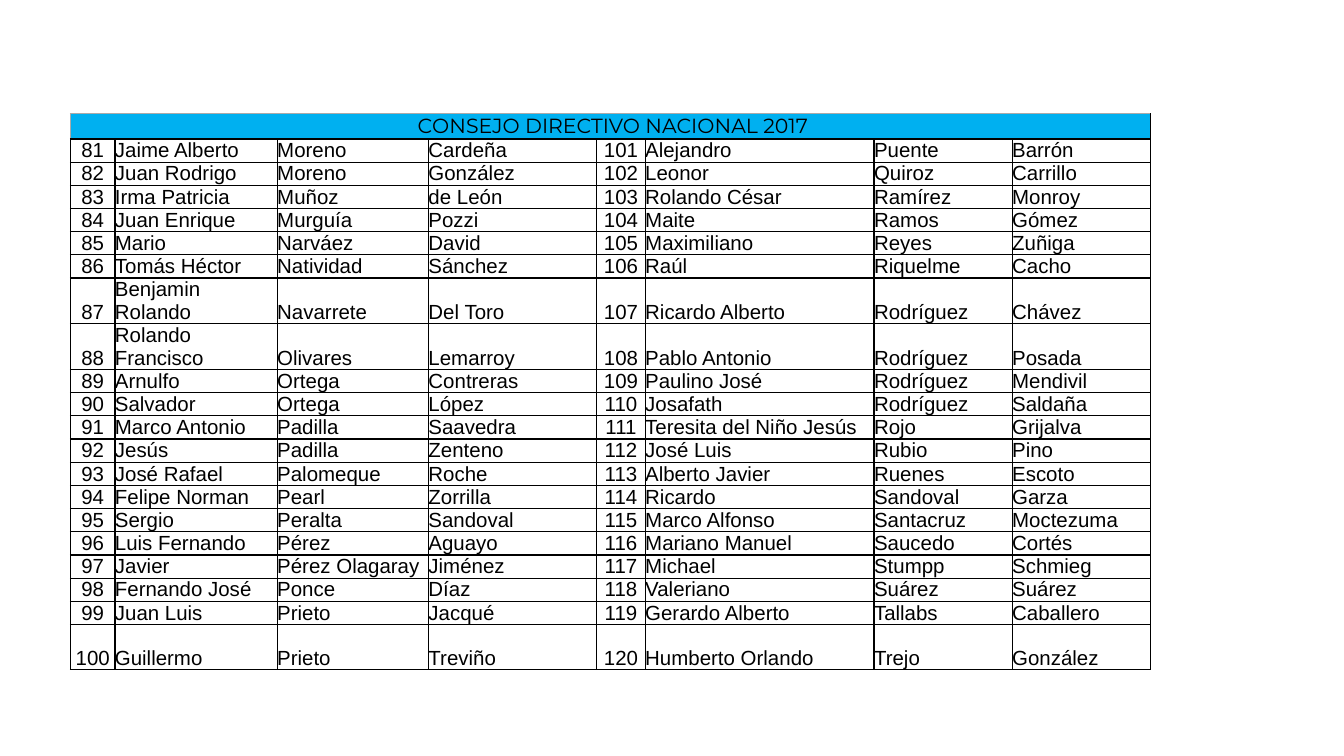
from lxml import etree
from pptx import Presentation
from pptx.dml.color import RGBColor
from pptx.enum.text import MSO_ANCHOR, PP_ALIGN
from pptx.oxml.ns import qn
from pptx.util import Inches, Pt

CENTER, LEFT = PP_ALIGN.CENTER, PP_ALIGN.LEFT
MIDDLE, BOTTOM = MSO_ANCHOR.MIDDLE, MSO_ANCHOR.BOTTOM
BLACK = RGBColor(0x00, 0x00, 0x00)
WHITE = RGBColor(0xFF, 0xFF, 0xFF)
GRAY = RGBColor(0xAA, 0xAA, 0xAA)
SKY_BLUE = RGBColor(0x00, 0xB0, 0xF0)

TEXT_SIZE = Pt(14.6)
TITLE = " CONSEJO DIRECTIVO NACIONAL 2017"
FIRST_NUMBER = 81
COLUMN_WIDTHS = [0.44, 1.61, 1.5, 1.67, 0.48, 2.27, 1.37, 1.37]
ROW_HEIGHT, LAST_ROW_HEIGHT = 0.23, 0.45

# Given names, first surname, second surname, in member order
MEMBERS = [
    ("Jaime Alberto", "Moreno", "Cardeña"),
    ("Juan Rodrigo", "Moreno", "González"),
    ("Irma Patricia", "Muñoz", "de León"),
    ("Juan Enrique", "Murguía", "Pozzi"),
    ("Mario", "Narváez", "David"),
    ("Tomás Héctor", "Natividad", "Sánchez"),
    ("Benjamin Rolando", "Navarrete", "Del Toro"),
    ("Rolando Francisco", "Olivares", "Lemarroy"),
    ("Arnulfo", "Ortega", "Contreras"),
    ("Salvador", "Ortega", "López"),
    ("Marco Antonio", "Padilla", "Saavedra"),
    ("Jesús", "Padilla", "Zenteno"),
    ("José Rafael", "Palomeque", "Roche"),
    ("Felipe Norman", "Pearl", "Zorrilla"),
    ("Sergio", "Peralta", "Sandoval"),
    ("Luis Fernando", "Pérez", "Aguayo"),
    ("Javier", "Pérez Olagaray", "Jiménez"),
    ("Fernando José", "Ponce", "Díaz"),
    ("Juan Luis", "Prieto", "Jacqué"),
    ("Guillermo", "Prieto", "Treviño"),
    ("Alejandro", "Puente", "Barrón"),
    ("Leonor", "Quiroz", "Carrillo"),
    ("Rolando César", "Ramírez", "Monroy"),
    ("Maite", "Ramos", "Gómez"),
    ("Maximiliano", "Reyes", "Zuñiga"),
    ("Raúl", "Riquelme", "Cacho"),
    ("Ricardo Alberto", "Rodríguez", "Chávez"),
    ("Pablo Antonio", "Rodríguez", "Posada"),
    ("Paulino José", "Rodríguez", "Mendivil"),
    ("Josafath", "Rodríguez", "Saldaña"),
    ("Teresita del Niño Jesús", "Rojo", "Grijalva"),
    ("José Luis", "Rubio", "Pino"),
    ("Alberto Javier", "Ruenes", "Escoto"),
    ("Ricardo", "Sandoval", "Garza"),
    ("Marco Alfonso", "Santacruz", "Moctezuma"),
    ("Mariano Manuel", "Saucedo", "Cortés"),
    ("Michael", "Stumpp", "Schmieg"),
    ("Valeriano", "Suárez", "Suárez"),
    ("Gerardo Alberto", "Tallabs", "Caballero"),
    ("Humberto Orlando", "Trejo", "González"),
]


def set_borders(cell, left, right, top, bottom):
    """Draw 1 pt borders; they must precede the fill in the cell properties."""
    properties = cell._tc.get_or_add_tcPr()
    sides = [("a:lnL", left), ("a:lnR", right), ("a:lnT", top), ("a:lnB", bottom)]
    for position, (side, color) in enumerate(sides):
        line = etree.Element(qn(side), w=str(Pt(1)))
        fill = etree.SubElement(line, qn("a:solidFill"))
        etree.SubElement(fill, qn("a:srgbClr"), val=str(color))
        properties.insert(position, line)


def fill_cell(cell, text, font_name, fill_color, align, anchor):
    cell.margin_left = cell.margin_right = cell.margin_top = cell.margin_bottom = 0
    cell.vertical_anchor = anchor
    cell.fill.solid()
    cell.fill.fore_color.rgb = fill_color
    paragraph = cell.text_frame.paragraphs[0]
    paragraph.text = text
    paragraph.alignment = align
    paragraph.font.name = font_name
    paragraph.font.size = TEXT_SIZE
    paragraph.font.color.rgb = BLACK


presentation = Presentation()
presentation.slide_width = Inches(13.33)
presentation.slide_height = Inches(7.5)
slide = presentation.slides.add_slide(presentation.slide_layouts[6])

# Council table: a title row, then two members side by side in each row
half = len(MEMBERS) // 2
row_heights = [ROW_HEIGHT] * half + [LAST_ROW_HEIGHT]
council = slide.shapes.add_table(
    len(row_heights), len(COLUMN_WIDTHS), Inches(0.7), Inches(1.13),
    Inches(sum(COLUMN_WIDTHS)), Inches(sum(row_heights))).table
council.first_row = False
council.horz_banding = False
for column, width in zip(council.columns, COLUMN_WIDTHS):
    column.width = Inches(width)
for row, height in zip(council.rows, row_heights):
    row.height = Inches(height)

# Title row
title_cell = council.cell(0, 0)
title_cell.merge(council.cell(0, len(COLUMN_WIDTHS) - 1))
fill_cell(title_cell, TITLE, "Montserrat", SKY_BLUE, CENTER, MIDDLE)
for cell in council.rows[0].cells:
    set_borders(cell, GRAY, BLACK, GRAY, BLACK)

# Numbered members: first half on the left, second half on the right
for index, names in enumerate(MEMBERS):
    side, row = divmod(index, half)
    entries = (str(FIRST_NUMBER + index), *names)
    for offset, text in enumerate(entries):
        cell = council.cell(row + 1, side * len(entries) + offset)
        align = CENTER if offset == 0 else LEFT
        fill_cell(cell, text, "Arial", WHITE, align, BOTTOM)
        set_borders(cell, BLACK, BLACK, BLACK, BLACK)

presentation.save("out.pptx")
